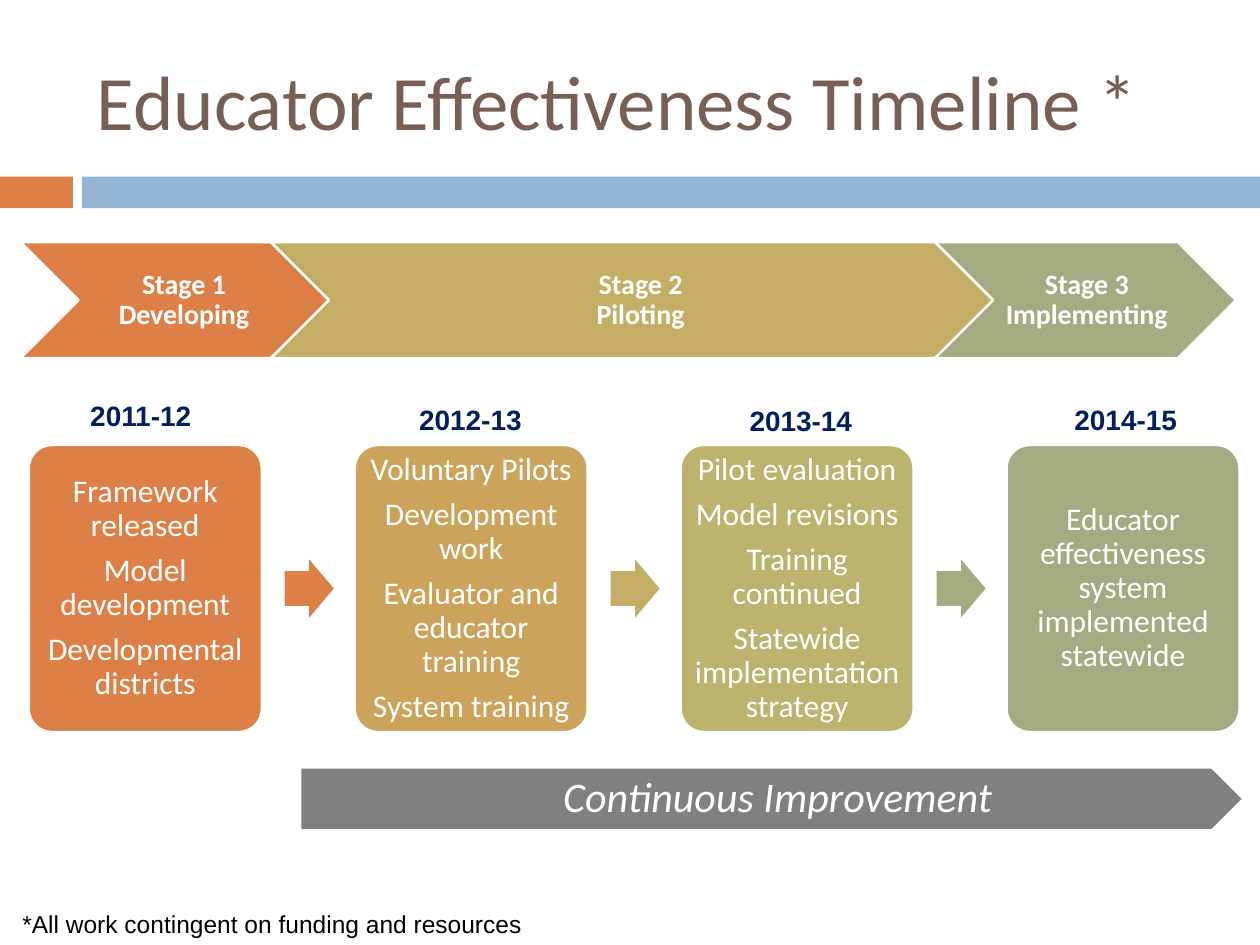
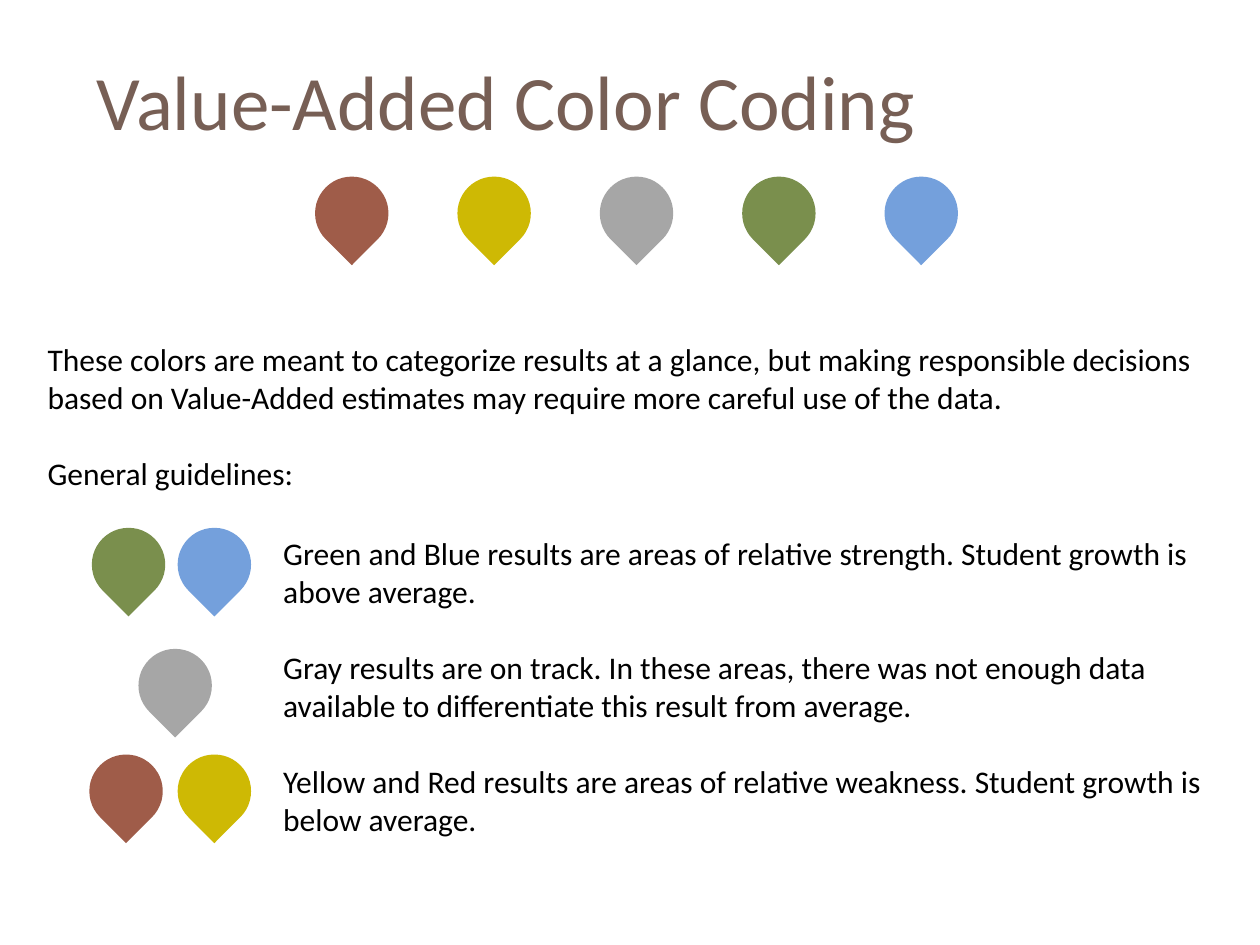
from pptx import Presentation
from pptx import util as u
from pptx.dml.color import RGBColor
from pptx.enum import shapes, text

KIND = shapes.MSO_SHAPE
MID = text.MSO_ANCHOR.MIDDLE
TOP = text.MSO_ANCHOR.TOP
CENTER = text.PP_ALIGN.CENTER
LEFT = text.PP_ALIGN.LEFT

WHITE, BLACK, BROWN, NAVY = "FFFFFF", "000000", "775F55", "002060"
ORANGE, SKY, GOLD, SAGE, STONE = "DD8047", "94B6D2", "C4AD64", "A5AB81", "808080"
RED, YELLOW, GRAY, GREEN, BLUE = "9F5C49", "CEB904", "A6A6A6", "7A8F4D", "74A0DC"

STAGES = [
    (0.41, 6.55, ORANGE, "Stage 1\nDeveloping"),
    (5.46, 14.86, GOLD, "Stage 2\nPiloting"),
    (18.85, 6.07, SAGE, "Stage 3\nImplementing"),
]
YEARS = [
    ("2011-12", 1.57, 7.9, ORANGE,
     ["Framework released", "Model development", "Developmental districts"]),
    ("2012-13", 8.2, 7.98, "CCA35B",
     ["Voluntary Pilots", "Development work", "Evaluator and educator training",
      "System training"]),
    ("2013-14", 14.86, 8.0, "BBB36E",
     ["Pilot evaluation", "Model revisions", "Training continued",
      "Statewide implementation strategy"]),
    ("2014-15", 21.41, 7.98, SAGE,
     ["Educator effectiveness system implemented statewide"]),
]
ARROWS = [ORANGE, GOLD, SAGE]
INTRO = [
    "These colors are meant to categorize results at a glance, but making "
    "responsible decisions based on Value-Added estimates may require more "
    "careful use of the data.",
    "General guidelines:",
]
RULES = [
    "Green and Blue results are areas of relative strength. Student growth is "
    "above average.",
    "Gray results are on track. In these areas, there was not enough data "
    "available to differentiate this result from average.",
    "Yellow and Red results are areas of relative weakness. Student growth is "
    "below average.",
]
KEYS = [
    (1.85, 10.64, GREEN), (3.58, 10.64, BLUE),
    (2.79, 13.08, GRAY),
    (1.8, 15.21, RED), (3.58, 15.21, YELLOW),
]


def tint(hue):
    return RGBColor.from_string(hue)


def place(left, top, wide, high):
    return [u.Cm(n) for n in (left, top, wide, high)]


def write(frame, paras, size, hue, font="Calibri", bold=False, slant=False,
          align=LEFT, anchor=TOP, inset=(0.25, 0.13, 0.25, 0.13), gap=0, lead=1.0):
    frame.word_wrap = True
    frame.vertical_anchor = anchor
    (frame.margin_left, frame.margin_top,
     frame.margin_right, frame.margin_bottom) = place(*inset)
    for i, words in enumerate(paras):
        para = frame.paragraphs[0] if i == 0 else frame.add_paragraph()
        para.alignment = align
        para.line_spacing = lead
        if i:
            para.space_before = u.Pt(gap)
        for j, line in enumerate(words.split("\n")):
            if j:
                para.add_line_break()
            run = para.add_run()
            run.text = line
            run.font.size = u.Pt(size)
            run.font.name = font
            run.font.bold = bold
            run.font.italic = slant
            run.font.color.rgb = tint(hue)


def label(slide, box, paras, size, hue, **style):
    write(slide.shapes.add_textbox(*place(*box)).text_frame, paras, size, hue, **style)


def block(slide, kind, box, fill, edge=False):
    shape = slide.shapes.add_shape(kind, *place(*box))
    shape.shadow.inherit = False
    shape.fill.solid()
    shape.fill.fore_color.rgb = tint(fill)
    if edge:
        shape.line.color.rgb = tint(WHITE)
        shape.line.width = u.Pt(1.5)
    else:
        shape.line.fill.background()
    return shape


def title(slide, words):
    label(slide, (1.7, 0.64, 22.66, 2.74), [words], 44, BROWN, anchor=MID)


def bands(slide):
    block(slide, KIND.RECTANGLE, (0, 3.56, 1.47, 0.64), ORANGE)
    block(slide, KIND.RECTANGLE, (1.65, 3.56, 23.75, 0.64), SKY)


def stage(slide, left, wide, fill, words):
    shape = block(slide, KIND.CHEVRON, (left, 4.88, wide, 2.34), fill, True)
    write(shape.text_frame, [words], 16, WHITE, bold=True, align=CENTER,
          anchor=MID, inset=(0.1, 0.05, 0.05, 0.05), lead=0.9)


def card(slide, left, fill, paras):
    shape = block(slide, KIND.ROUNDED_RECTANGLE, (left, 8.97, 4.7, 5.79), fill, True)
    shape.adjustments[0] = 0.1
    write(shape.text_frame, paras, 18, WHITE, align=CENTER, anchor=MID,
          inset=(0.08, 0.08, 0.08, 0.08), gap=6.3, lead=0.9)


def arrow(slide, left, fill):
    shape = block(slide, KIND.RIGHT_ARROW, (left, 11.28, 0.99, 1.17), fill)
    shape.adjustments[0] = 0.6


def drop(slide, left, top, fill):
    block(slide, KIND.TEAR, (left, top, 1.48, 1.48), fill).rotation = 135


def timeline(slide):
    bands(slide)
    title(slide, "Educator Effectiveness Timeline *")
    for item in STAGES:
        stage(slide, *item)
    step = 6.57
    for i, (year, left, top, fill, paras) in enumerate(YEARS):
        card(slide, 0.58 + i * step, fill, paras)
        label(slide, (left, top, 3, 0.94), [year], 16, NAVY, font="Arial", bold=True)
    for i, fill in enumerate(ARROWS):
        arrow(slide, 5.74 + i * step, fill)
    plate = block(slide, KIND.PENTAGON, (6.05, 15.47, 19.02, 1.27), STONE, True)
    write(plate.text_frame, ["Continuous Improvement"], 24, WHITE, slant=True,
          align=CENTER, anchor=MID, inset=(0.6, 0.05, 0.05, 0.05), lead=0.9)
    label(slide, (0.2, 18.19, 15.04, 0.86),
          ["*All work contingent on funding and resources"], 14, BLACK, font="Arial")


def coding(slide):
    title(slide, "Value-Added Color Coding")
    for i, fill in enumerate([RED, YELLOW, GRAY, GREEN, BLUE]):
        drop(slide, 6.35 + i * 2.87, 3.56, fill)
    label(slide, (0.71, 6.73, 23.67, 3.33), INTRO, 18, BLACK, gap=22)
    for key in KEYS:
        drop(slide, *key)
    label(slide, (5.46, 10.64, 19.25, 7.19), RULES, 18, BLACK, gap=22)


def main():
    deck = Presentation()
    deck.slide_width, deck.slide_height = u.Cm(25.4), u.Cm(19.05)
    for build in (timeline, coding):
        build(deck.slides.add_slide(deck.slide_layouts[6]))
    deck.save("out.pptx")


if __name__ == "__main__":
    main()
